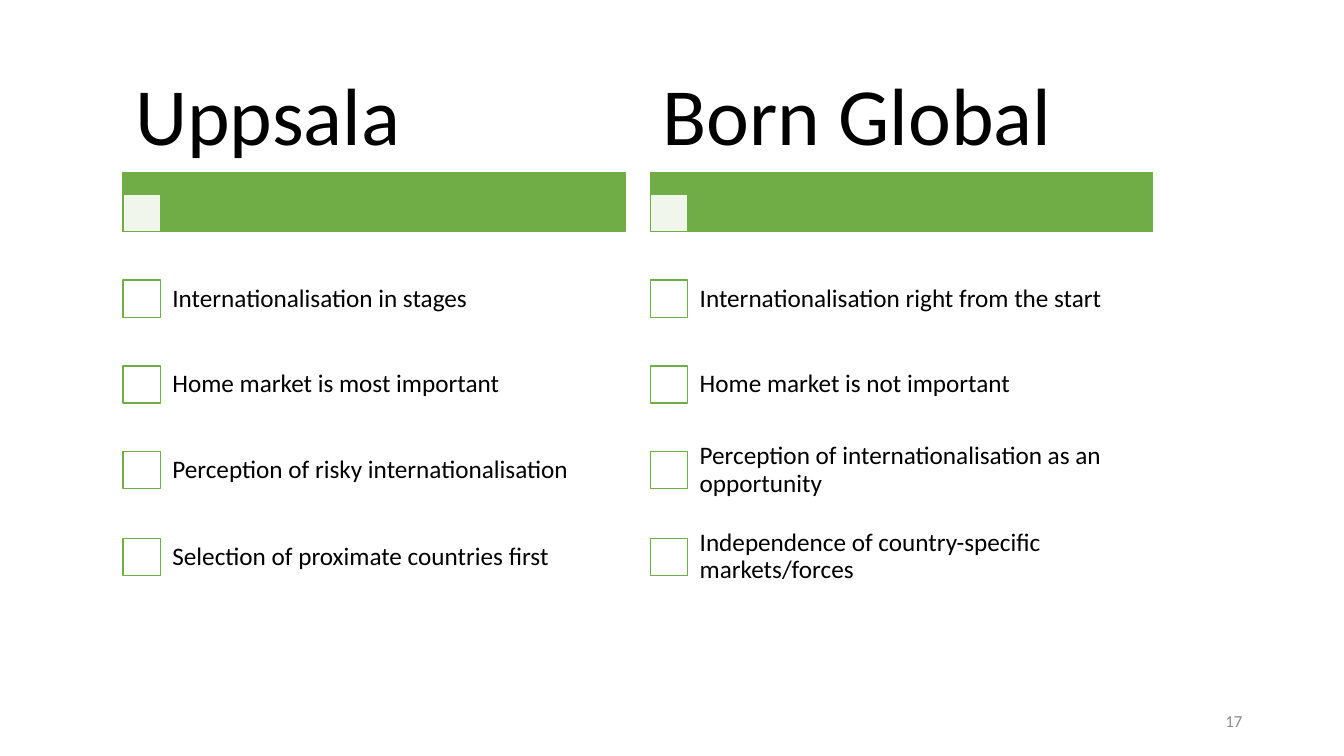
from dataclasses import dataclass

from lxml.etree import SubElement
from pptx import Presentation
from pptx.dml.color import RGBColor
from pptx.enum.shapes import MSO_SHAPE as Shape
from pptx.enum.text import MSO_ANCHOR as Anchor, MSO_AUTO_SIZE as Fit, PP_ALIGN as Align
from pptx.oxml.ns import qn
from pptx.util import Emu, Pt

PX = 9144  # 100 px to the inch
GREEN, WHITE, BLACK, GREY = "70AD47", "FFFFFF", "000000", "8C8C8C"
WIDE, BOX, DENT = 498, 37, 35
ROW_TOP, ROW_SPAN, ROW_TALL = 254, 256, 85


@dataclass(frozen=True)
class Column:
    left: int
    slot: int
    head: str
    items: tuple[str, ...]


COLUMNS = (
    Column(122, 1, "Uppsala", (
        "Internationalisation in stages",
        "Home market is most important",
        "Perception of risky internationalisation",
        "Selection of proximate countries first",
    )),
    Column(645, 3, "Born Global", (
        "Internationalisation right from the start",
        "Home market is not important",
        "Perception of internationalisation as an opportunity",
        "Independence of country-specific markets/forces",
    )),
)


def px(size: int) -> Emu:
    return Emu(size * PX)


def place(shape, left: int, top: int, wide: int, tall: int) -> None:
    shape.left, shape.top = px(left), px(top)
    shape.width, shape.height = px(wide), px(tall)


def paint(color, code: str) -> None:
    color.rgb = RGBColor.from_string(code)


def write(shape, text: str, *, size: int, color: str = BLACK, pad: tuple[int, int] = (10, 5),
          align=Align.LEFT, leading: float = 1.0) -> None:
    frame = shape.text_frame
    frame.word_wrap = True
    frame.auto_size = Fit.NONE
    frame.vertical_anchor = Anchor.MIDDLE
    frame.margin_left = frame.margin_right = px(pad[0])
    frame.margin_top = frame.margin_bottom = px(pad[1])
    para = frame.paragraphs[0]
    para.alignment, para.line_spacing, para.space_before = align, leading, Pt(0)
    run = para.add_run()
    run.text = text
    run.font.name, run.font.size, run.font.bold = "Calibri", Pt(size), False
    paint(run.font.color, color)


def block(slide, left: int, top: int, wide: int, tall: int, fill: str, alpha: int = 100) -> None:
    """Draw a green-edged rectangle; alpha is its opacity in percent."""
    shape = slide.shapes.add_shape(Shape.RECTANGLE, px(left), px(top), px(wide), px(tall))
    shape.shadow.inherit = False
    shape.fill.solid()
    paint(shape.fill.fore_color, fill)
    paint(shape.line.color, GREEN)
    shape.line.width = Pt(1)
    if alpha < 100:
        tint = shape.fill._xPr.find(qn("a:solidFill"))[0]
        SubElement(tint, qn("a:alpha"), val=str(alpha * 1000))


def label(slide, left: int, top: int, wide: int, tall: int, text: str, **style) -> None:
    shape = slide.shapes.add_textbox(px(left), px(top), px(wide), px(tall))
    write(shape, text, **style)


def draw(slide, col: Column) -> None:
    block(slide, col.left, 171, WIDE, 59, GREEN)
    block(slide, col.left, 193, BOX, BOX, WHITE, alpha=90)
    head = slide.placeholders[col.slot]
    place(head, col.left, 66, WIDE, 105)
    write(head, col.head, size=58, pad=(12, 8), leading=0.9)
    for i, item in enumerate(col.items):
        top = ROW_TOP + ROW_SPAN * i // 3
        block(slide, col.left, top + 24, BOX, BOX, WHITE)
        label(slide, col.left + DENT, top, WIDE - DENT, ROW_TALL, item,
              size=18, pad=(14, 14), leading=0.9)


def main() -> None:
    deck = Presentation()
    deck.slide_width, deck.slide_height = px(1333), px(750)
    slide = deck.slides.add_slide(deck.slide_layouts.get_by_name("Comparison"))
    for col in COLUMNS:
        draw(slide, col)
    label(slide, 942, 695, 300, 40, "17", size=12, color=GREY, align=Align.RIGHT)
    for spare in list(slide.placeholders):
        if not spare.text_frame.text:
            spare.element.getparent().remove(spare.element)
    deck.save("out.pptx")


if __name__ == "__main__":
    main()
